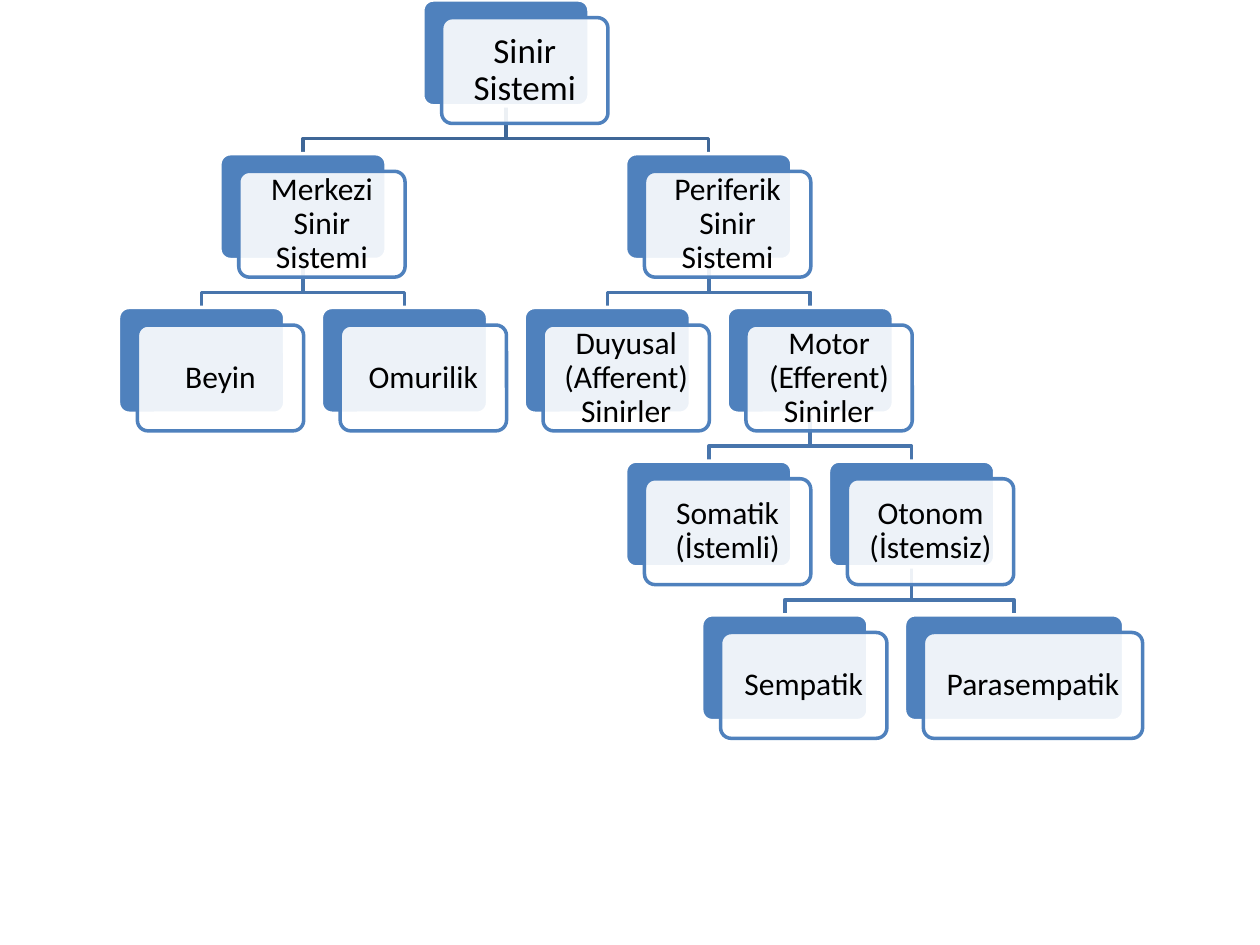
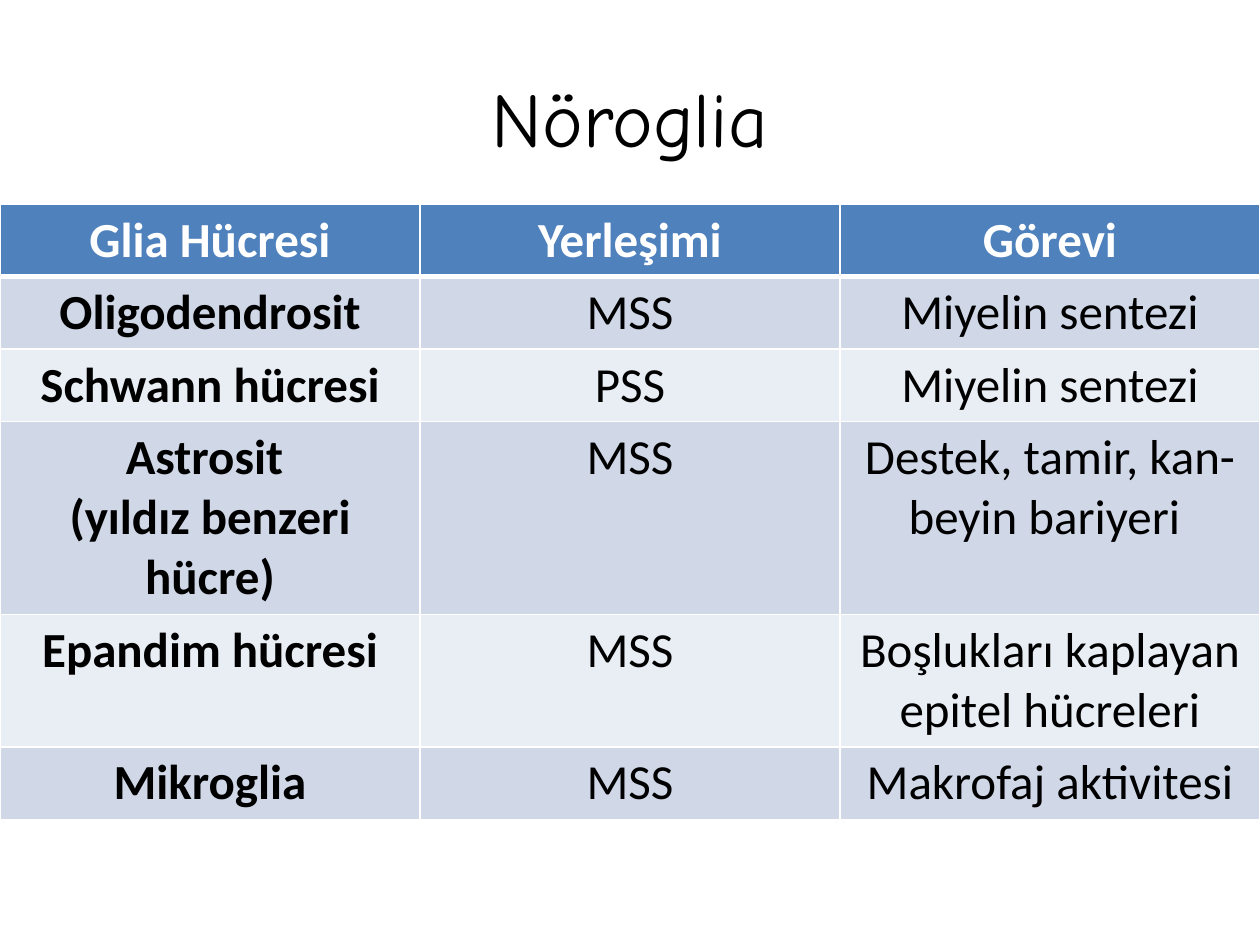
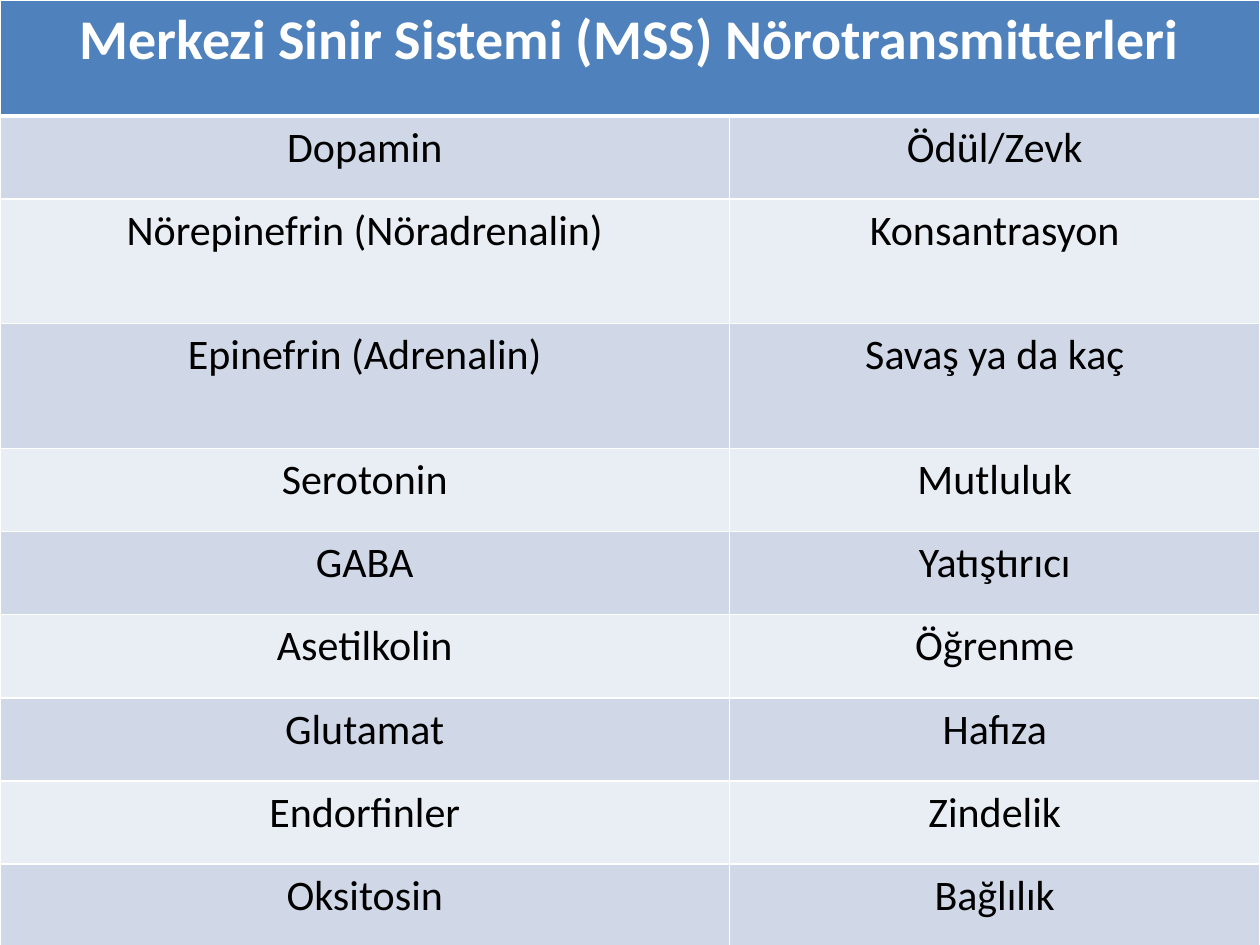
from lxml.etree import SubElement
from pptx import Presentation
from pptx.dml.color import RGBColor
from pptx.enum.shapes import MSO_SHAPE as Shape
from pptx.enum.text import MSO_ANCHOR as Anchor, PP_ALIGN as Align
from pptx.oxml.ns import qn
from pptx.util import Inches, Pt

BLUE, WHITE, BLACK = "4F81BD", "FFFFFF", "000000"
BANDS = ["E9EDF4", "D0D8E8"]
FONT = "Calibri"


def paint(target, color):
    """Give a fill a solid colour, or a font or line its colour."""
    if hasattr(target, "solid"):
        target.solid()
        target.fore_color.rgb = RGBColor.from_string(color)
    else:
        target.color.rgb = RGBColor.from_string(color)


def add_grid(slide, top, cols, rows, data, sizes, lead=False):
    """Add a full-width banded table; sizes are head and body points, lead bolds column one."""
    frame = slide.shapes.add_table(len(rows), len(cols), 0, Inches(top),
                                   Inches(sum(cols)), Inches(sum(rows)))
    table = frame.table
    for col, width in zip(table.columns, cols):
        col.width = Inches(width)
    for row, height in zip(table.rows, rows):
        row.height = Inches(height)
    for r, line in enumerate(data):
        for c, text in enumerate(line):
            cell = table.cell(r, c)
            cell.text = text
            if len(line) < len(cols):
                cell.merge(table.cell(r, len(cols) - 1))
            props = cell._tc.get_or_add_tcPr()
            for side in "LRTB":
                thick = (r, side) in [(0, "B"), (1, "T")]
                edge = SubElement(props, qn("a:ln" + side), w=str(Pt(3 if thick else 1)))
                SubElement(SubElement(edge, qn("a:solidFill")), qn("a:srgbClr"), val=WHITE)
            paint(cell.fill, BANDS[r % 2] if r else BLUE)
            for para in cell.text_frame.paragraphs:
                para.alignment = Align.CENTER
                para.font.name = FONT
                para.font.size = Pt(sizes[min(r, 1)])
                para.font.bold = r == 0 or (lead and c == 0)
                paint(para.font, BLACK if r else WHITE)


deck = Presentation()
deck.slide_width, deck.slide_height = Inches(10), Inches(7.5)
titled, blank = deck.slide_layouts[5], deck.slide_layouts[6]

# Slide 1: tree of the nervous system
slide = deck.slides.add_slide(blank)
WIDE, HIGH = 1.32, 0.84
LEFT, STEP, ROW = 0.94, 0.805, 1.22
SHIFT, DROP, ELBOW = 0.15, 0.14, 0.26

# text, column, row, index of parent, width
nodes = [
    ("Sinir Sistemi", 3, 0, None, WIDE),
    ("Merkezi Sinir Sistemi", 1, 1, 0, WIDE),
    ("Beyin", 0, 2, 1, WIDE),
    ("Omurilik", 2, 2, 1, WIDE),
    ("Periferik Sinir Sistemi", 5, 1, 0, WIDE),
    ("Duyusal (Afferent) Sinirler", 4, 2, 4, WIDE),
    ("Motor (Efferent) Sinirler", 6, 2, 4, WIDE),
    ("Somatik (İstemli)", 5, 3, 6, WIDE),
    ("Otonom (İstemsiz)", 7, 3, 6, WIDE),
    ("Sempatik", 5.75, 4, 8, WIDE),
    ("Parasempatik", 7.75, 4, 8, 1.74),
]

for text, col, row, parent, width in reversed(nodes[1:]):
    start = LEFT + nodes[parent][1] * STEP + WIDE / 2
    end = LEFT + col * STEP + width / 2
    base = (row - 1) * ROW + HIGH
    points = [(start, base), (start, base + ELBOW), (end, base + ELBOW), (end, row * ROW)]
    points = [(Inches(x), Inches(y)) for x, y in points]
    path = slide.shapes.build_freeform(*points[0])
    path.add_line_segments(points[1:], close=False)
    branch = path.convert_to_shape()
    branch.shadow.inherit = False
    branch.fill.background()
    branch.line.width = Pt(2)
    paint(branch.line, "4875AC" if parent else "3F6797")

for text, col, row, parent, width in nodes:
    for front in (0, 1):
        box = slide.shapes.add_shape(
            Shape.ROUNDED_RECTANGLE,
            Inches(LEFT + col * STEP + front * SHIFT), Inches(row * ROW + front * DROP),
            Inches(width), Inches(HIGH))
        box.adjustments[0] = 0.1
        box.shadow.inherit = False
        box.line.width = Pt(2)
        paint(box.fill, WHITE if front else BLUE)
        paint(box.line, BLUE if front else WHITE)
    tint = box.fill._xPr.find(qn("a:solidFill")).find(qn("a:srgbClr"))
    SubElement(tint, qn("a:alpha"), val="90000")
    frame = box.text_frame
    frame.word_wrap = True
    frame.vertical_anchor = Anchor.MIDDLE
    frame.margin_left = frame.margin_right = Inches(0.05)
    frame.margin_top = frame.margin_bottom = Inches(0.05)
    frame.text = text
    para = frame.paragraphs[0]
    para.alignment = Align.CENTER
    para.line_spacing = 0.9
    para.font.name = FONT
    para.font.size = Pt(18 if row else 20)
    paint(para.font, BLACK)

# Slide 2: glia cells
slide = deck.slides.add_slide(titled)
title = slide.shapes.title
title.left, title.top = Inches(0.5), Inches(0.3)
title.width, title.height = Inches(9), Inches(1.25)
title.text_frame.text = "Nöroglia"
title.text_frame.vertical_anchor = Anchor.MIDDLE
para = title.text_frame.paragraphs[0]
para.alignment = Align.CENTER
para.font.name = "Comic Neue"
para.font.size = Pt(44)
paint(para.font, BLACK)

cells = [
    ("Glia Hücresi", "Yerleşimi", "Görevi"),
    ("Oligodendrosit", "MSS", "Miyelin sentezi"),
    ("Schwann hücresi", "PSS", "Miyelin sentezi"),
    ("Astrosit \n(yıldız benzeri hücre)", "MSS", "Destek, tamir, kan-beyin bariyeri "),
    ("Epandim hücresi", "MSS", "Boşlukları kaplayan epitel hücreleri"),
    ("Mikroglia", "MSS", "Makrofaj aktivitesi"),
]
add_grid(slide, 1.62, [10 / 3] * 3, [0.57] * 3 + [1.53, 1.05, 0.57], cells, (28, 28), lead=True)

# Slide 3: neurotransmitters
slide = deck.slides.add_slide(blank)
signals = [
    ("Merkezi Sinir Sistemi (MSS) Nörotransmitterleri",),
    ("Dopamin", "Ödül/Zevk"),
    ("Nörepinefrin (Nöradrenalin)", "Konsantrasyon"),
    ("Epinefrin (Adrenalin)", "Savaş ya da kaç"),
    ("Serotonin", "Mutluluk"),
    ("GABA", "Yatıştırıcı"),
    ("Asetilkolin", "Öğrenme"),
    ("Glutamat", "Hafıza"),
    ("Endorfinler", "Zindelik"),
    ("Oksitosin", "Bağlılık"),
]
add_grid(slide, 0, [5.79, 4.21], [0.92, 0.66, 0.99, 0.99] + [0.66] * 6, signals, (32, 24))

deck.save("out.pptx")
